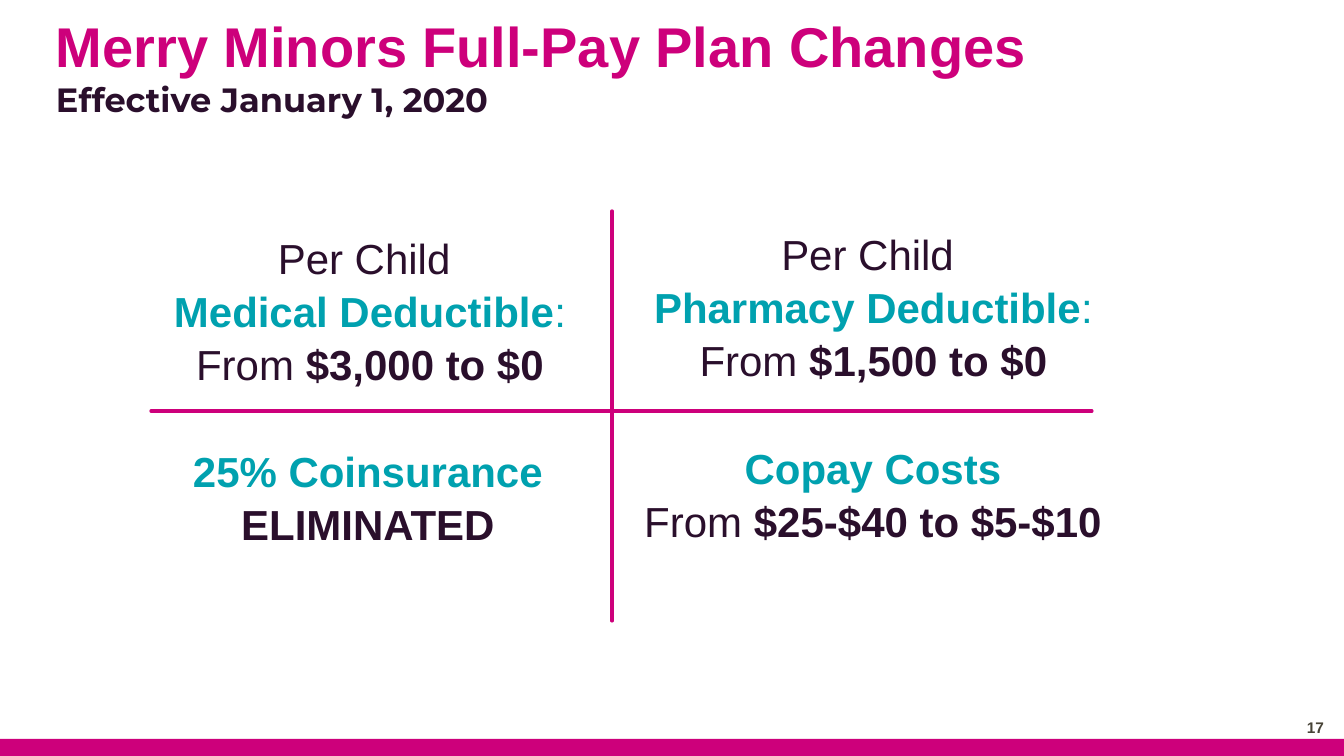
from pptx import Presentation
from pptx import util as u
from pptx.dml.color import RGBColor
from pptx.enum import shapes, text
from pptx.oxml.ns import qn
from pptx.oxml.xmlchemy import OxmlElement

PX = 914400 / 100.8
COLORS = {"magenta": "CD007B", "teal": "00A1AF", "plum": "2A0F2C", "gray": "474337"}


def px(length):
    return u.Emu(round(length * PX))


def color(name):
    return RGBColor.from_string(COLORS[name])


def place(target, box):
    target.left, target.top, target.width, target.height = map(px, box)


def write(frame, lines, align=text.PP_ALIGN.LEFT, anchor=text.MSO_ANCHOR.TOP,
          inset=(0, 0), spacing=1.0):
    frame.word_wrap = True
    frame.auto_size = text.MSO_AUTO_SIZE.NONE
    frame.vertical_anchor = anchor
    frame.margin_left = frame.margin_right = px(inset[0])
    frame.margin_top = frame.margin_bottom = px(inset[1])
    for index, line in enumerate(lines):
        paragraph = frame.paragraphs[0] if index == 0 else frame.add_paragraph()
        paragraph.alignment = align
        paragraph.line_spacing = spacing
        for words, size, fill, bold, face in line:
            run = paragraph.add_run()
            run.text = words
            run.font.size = u.Pt(size)
            run.font.bold = bold
            run.font.name = face
            run.font.color.rgb = color(fill)


def add_heading(slide, box):
    heading = slide.shapes.title
    place(heading, box)
    write(heading.text_frame, [
        [("Merry Minors Full-Pay Plan Changes", 40, "magenta", True, "Arial")],
        [("Effective January 1, 2020", 24, "plum", True, "Montserrat")],
    ], anchor=text.MSO_ANCHOR.BOTTOM)


def add_footer(slide, box):
    left, top, width, height = box
    band = slide.shapes.add_shape(shapes.MSO_SHAPE.RECTANGLE, *map(px, box))
    band.shadow.inherit = False
    band.fill.solid()
    band.fill.fore_color.rgb = color("magenta")
    band.line.fill.background()
    number = slide.shapes.add_textbox(
        px(left + width - 99), px(top - 32), px(79), px(40))
    write(number.text_frame, [[("17", 11, "gray", True, "Arial")]],
          align=text.PP_ALIGN.RIGHT, anchor=text.MSO_ANCHOR.MIDDLE)


def add_divider(slide, start, end):
    divider = slide.shapes.add_connector(
        shapes.MSO_CONNECTOR.STRAIGHT, *map(px, start + end))
    divider.line.color.rgb = color("magenta")
    divider.line.width = u.Pt(2.25)
    properties = divider._element.spPr
    properties.find(qn("a:ln")).set("cap", "rnd")
    properties.append(OxmlElement("a:effectLst"))


def add_change(slide, box, lines):
    change = slide.shapes.add_textbox(*map(px, box))
    write(change.text_frame,
          [[(words, 30, fill, bold, "Arial") for words, fill, bold in line]
           for line in lines],
          align=text.PP_ALIGN.CENTER, inset=(10, 5), spacing=1.05)


def deductible(kind, amounts):
    return [
        [("Per Child ", "plum", False)],
        [(f"{kind} Deductible", "teal", True), (":", "teal", False)],
        [("From ", "plum", False), (amounts, "plum", True)],
    ]


def add_quadrants(slide, box):
    left, top, width, height = box
    center, middle = left + 461, top + 200
    add_divider(slide, (left, middle), (left + width, middle))
    add_divider(slide, (center, top + height), (center, top))
    add_change(slide, (left - 16, top + 14, 470, 184),
               deductible("Medical", "$3,000 to $0"))
    add_change(slide, (center + 2, top + 10, 519, 163),
               deductible("Pharmacy", "$1,500 to $0"))
    add_change(slide, (left - 18, middle + 27, 470, 134), [
        [("25% Coinsurance", "teal", True)],
        [("ELIMINATED", "plum", True)],
    ])
    add_change(slide, (center + 12, middle + 24, 498, 134), [
        [("Copay Costs", "teal", True)],
        [("From ", "plum", False), ("$25-$40 to $5-$10", "plum", True)],
    ])


def main():
    deck = Presentation()
    deck.slide_width, deck.slide_height = px(1344), px(756)
    slide = deck.slides.add_slide(deck.slide_layouts[5])
    add_footer(slide, (0, 739, 1344, 17))
    add_heading(slide, (56, 10, 1100, 109))
    add_quadrants(slide, (151, 211, 941, 410))
    deck.save("out.pptx")


if __name__ == "__main__":
    main()
